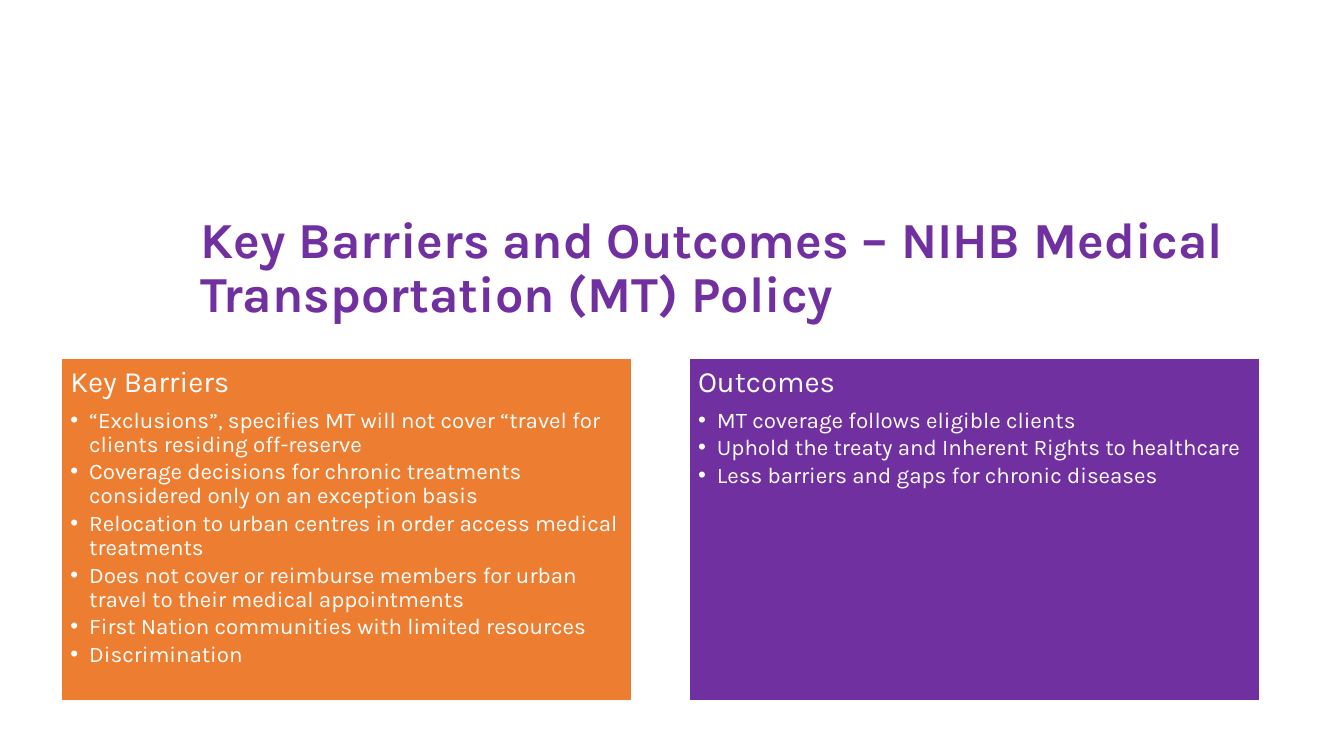
from lxml import etree
from pptx import Presentation
from pptx.dml import color
from pptx.enum import text
from pptx.oxml import ns
from pptx.util import Pt

FONT = "Karla"
PURPLE, ORANGE, WHITE = "7030A0", "ED7D31", "FFFFFF"
INDENT = 13.5
PANEL_TOP, PANEL_WIDTH, PANEL_HEIGHT = 255.6, 407.5, 244.8
PANEL_LEFT, PANEL_STEP = 43.9, 448.4

TITLE = "Key Barriers and Outcomes – NIHB Medical Transportation (MT) Policy"
PANELS = [
    ("Key Barriers", ORANGE, [
        "“Exclusions”, specifies MT will not cover “travel for clients residing off-reserve",
        "Coverage decisions for chronic treatments considered only on an exception basis",
        "Relocation to urban centres in order access medical treatments",
        "Does not cover or reimburse members for urban travel to their medical appointments",
        "First Nation communities with limited resources",
        "Discrimination",
    ]),
    ("Outcomes", PURPLE, [
        "MT coverage follows eligible clients",
        "Uphold the treaty and Inherent Rights to healthcare",
        "Less barriers and gaps for chronic diseases",
    ]),
]


def rgb(value):
    return color.RGBColor.from_string(value)


def assign(target, values):
    for name, value in values.items():
        setattr(target, name, value)


def place(shape, box, inset_side, inset_top):
    left, top, width, height = box
    assign(shape, {"left": Pt(left), "top": Pt(top), "width": Pt(width), "height": Pt(height)})
    assign(shape.text_frame, {
        "word_wrap": True,
        "auto_size": text.MSO_AUTO_SIZE.NONE,
        "vertical_anchor": text.MSO_ANCHOR.TOP,
        "margin_left": Pt(inset_side), "margin_right": Pt(inset_side),
        "margin_top": Pt(inset_top), "margin_bottom": Pt(inset_top),
    })


def set_bullet(para, symbol):
    properties = para._p.get_or_add_pPr()
    indent = INDENT if symbol else 0
    properties.set("marL", str(int(Pt(indent))))
    properties.set("indent", str(-int(Pt(indent))))
    if symbol:
        etree.SubElement(properties, ns.qn("a:buFont")).set("typeface", "Arial")
        etree.SubElement(properties, ns.qn("a:buChar")).set("char", symbol)
    else:
        etree.SubElement(properties, ns.qn("a:buNone"))


def write(para, words, size, ink, after=0, bold=False):
    assign(para, {
        "alignment": text.PP_ALIGN.LEFT, "line_spacing": 0.9,
        "space_before": Pt(0), "space_after": Pt(after),
    })
    span = para.add_run()
    span.text = words
    assign(span.font, {"name": FONT, "size": Pt(size), "bold": bold})
    span.font.color.rgb = rgb(ink)


def add_title(shape, box):
    place(shape, box, 7.2, 3.6)
    write(shape.text_frame.paragraphs[0], TITLE, 36, PURPLE, bold=True)


def add_panel(shape, box, heading, fill, items):
    place(shape, box, 6.3, 6.3)
    shape.fill.solid()
    shape.fill.fore_color.rgb = rgb(fill)
    shape.line.color.rgb = rgb(WHITE)
    shape.line.width = Pt(1)
    frame = shape.text_frame
    para = frame.paragraphs[0]
    set_bullet(para, None)
    write(para, heading, 21, WHITE, after=7.35)
    for item in items:
        para = frame.add_paragraph()
        para.level = 1
        set_bullet(para, "•")
        write(para, item, 16, WHITE, after=2.4)


def main():
    deck = Presentation()
    assign(deck, {"slide_width": Pt(960), "slide_height": Pt(540)})
    page = deck.slides.add_slide(deck.slide_layouts[3])
    add_title(page.shapes.title, (136.1, 149.8, 799.2, 45.4))
    for index, (heading, fill, items) in enumerate(PANELS):
        box = (PANEL_LEFT + index * PANEL_STEP, PANEL_TOP, PANEL_WIDTH, PANEL_HEIGHT)
        add_panel(page.placeholders[index + 1], box, heading, fill, items)
    deck.save("out.pptx")


if __name__ == "__main__":
    main()
